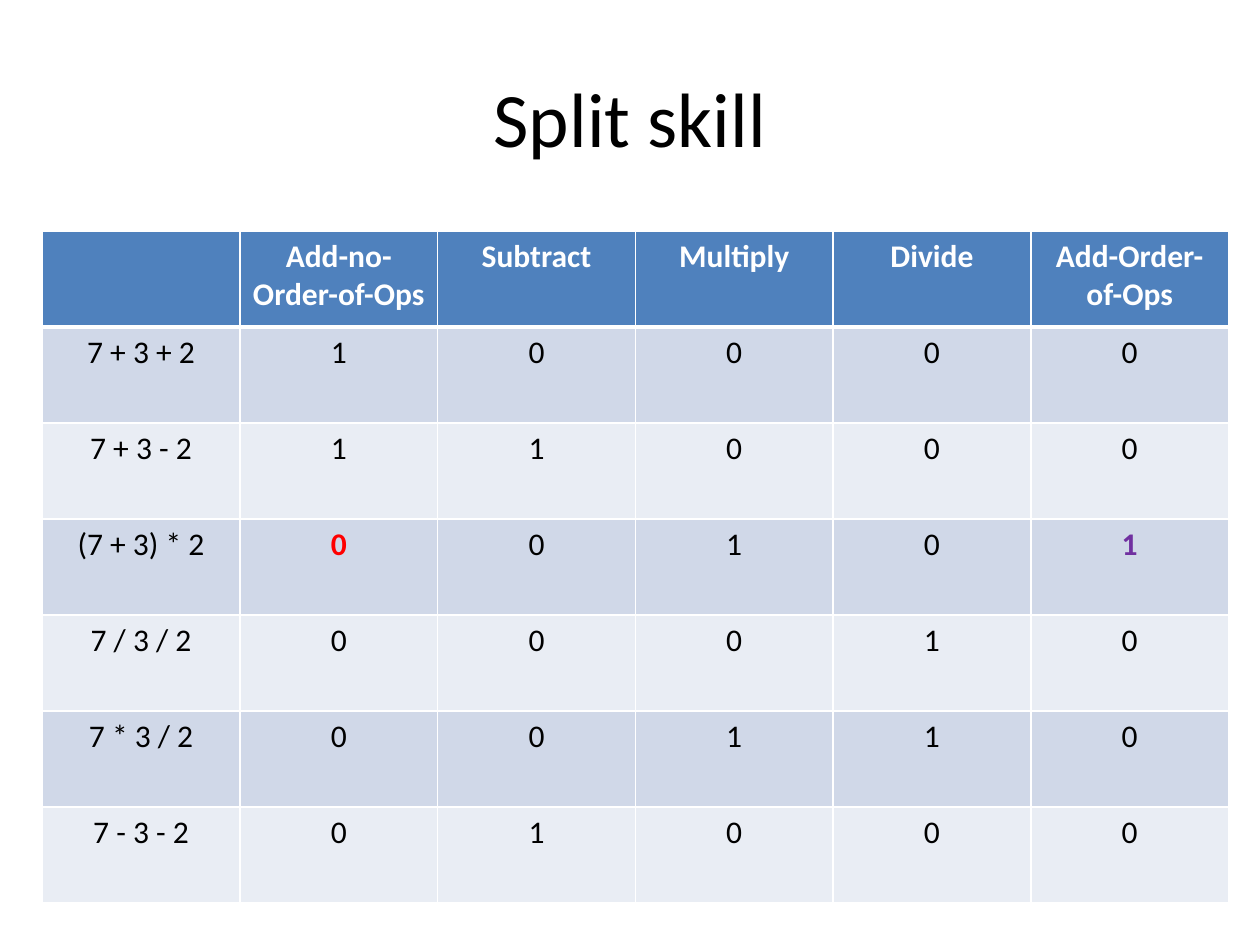
from dataclasses import dataclass

from lxml import etree
from pptx import Presentation
from pptx.dml.color import RGBColor
from pptx.enum.text import MSO_ANCHOR, PP_ALIGN
from pptx.oxml.ns import qn
from pptx.util import Cm, Pt

CENTER = PP_ALIGN.CENTER
MIDDLE = MSO_ANCHOR.MIDDLE
TITLE_ONLY = 5


@dataclass(frozen=True)
class Theme:
    font: str = "Calibri"
    title_size: int = 44
    table_size: int = 18
    text: str = "000000"
    white: str = "FFFFFF"
    header: str = "4F81BD"
    bands: tuple = ("D0D8E8", "E9EDF4")
    removed: str = "FF0000"
    added: str = "7030A0"
    thin: float = 1
    thick: float = 3


SKILLS = ["", "Add-no-Order-of-Ops", "Subtract", "Multiply", "Divide",
          "Add-Order-of-Ops"]
PROBLEMS = [
    ("7 + 3 + 2", 1, 0, 0, 0, 0),
    ("7 + 3 - 2", 1, 1, 0, 0, 0),
    ("(7 + 3) * 2", 0, 0, 1, 0, 1),
    ("7 / 3 / 2", 0, 0, 0, 1, 0),
    ("7 * 3 / 2", 0, 0, 1, 1, 0),
    ("7 - 3 - 2", 0, 1, 0, 0, 0),
]


def write_text(frame, text, *, font, size, color, bold=False):
    paragraph = frame.paragraphs[0]
    paragraph.alignment = CENTER
    run = paragraph.add_run()
    run.text = text
    run.font.name = font
    run.font.size = Pt(size)
    run.font.bold = bold
    run.font.color.rgb = RGBColor.from_string(color)


def set_borders(cell, color, widths):
    """Draw cell borders; must run before the fill, which follows them in the XML."""
    properties = cell._tc.get_or_add_tcPr()
    for side, width in widths.items():
        line = etree.SubElement(properties, qn(f"a:ln{side}"), w=str(Pt(width)))
        solid = etree.SubElement(line, qn("a:solidFill"))
        etree.SubElement(solid, qn("a:srgbClr"), val=color)


class SlideBuilder:
    def __init__(self, slide, theme):
        self.slide = slide
        self.theme = theme

    def title(self, text, left, top, width, height):
        title = self.slide.shapes.title
        title.left, title.top, title.width, title.height = left, top, width, height
        title.text_frame.vertical_anchor = MIDDLE
        write_text(title.text_frame, text, font=self.theme.font,
                   size=self.theme.title_size, color=self.theme.text)

    def table(self, header, body, highlights, left, top, width, height):
        """Add a banded table; highlights maps (row, column) to a text colour."""
        theme = self.theme
        rows = [header, *body]
        grid = self.slide.shapes.add_table(
            len(rows), len(header), left, top, width, height).table
        for r, values in enumerate(rows):
            is_header = r == 0
            fill = theme.header if is_header else theme.bands[(r - 1) % 2]
            base_color = theme.white if is_header else theme.text
            widths = {"L": theme.thin, "R": theme.thin,
                      "T": theme.thick if r == 1 else theme.thin,
                      "B": theme.thick if is_header else theme.thin}
            for c, value in enumerate(values):
                cell = grid.cell(r, c)
                set_borders(cell, theme.white, widths)
                cell.fill.solid()
                cell.fill.fore_color.rgb = RGBColor.from_string(fill)
                if value != "":
                    write_text(cell.text_frame, str(value), font=theme.font,
                               size=theme.table_size,
                               color=highlights.get((r, c), base_color),
                               bold=is_header or (r, c) in highlights)


def main():
    presentation = Presentation()
    presentation.slide_width, presentation.slide_height = Cm(25.4), Cm(19.05)
    theme = Theme()
    slide = presentation.slides.add_slide(presentation.slide_layouts[TITLE_ONLY])
    builder = SlideBuilder(slide, theme)
    builder.title("Split skill", Cm(1.27), Cm(0.76), Cm(22.86), Cm(3.18))
    builder.table(SKILLS, PROBLEMS, {(3, 1): theme.removed, (3, 5): theme.added},
                  Cm(0.85), Cm(4.66), Cm(23.92), Cm(13.55))
    presentation.save("out.pptx")


if __name__ == "__main__":
    main()
